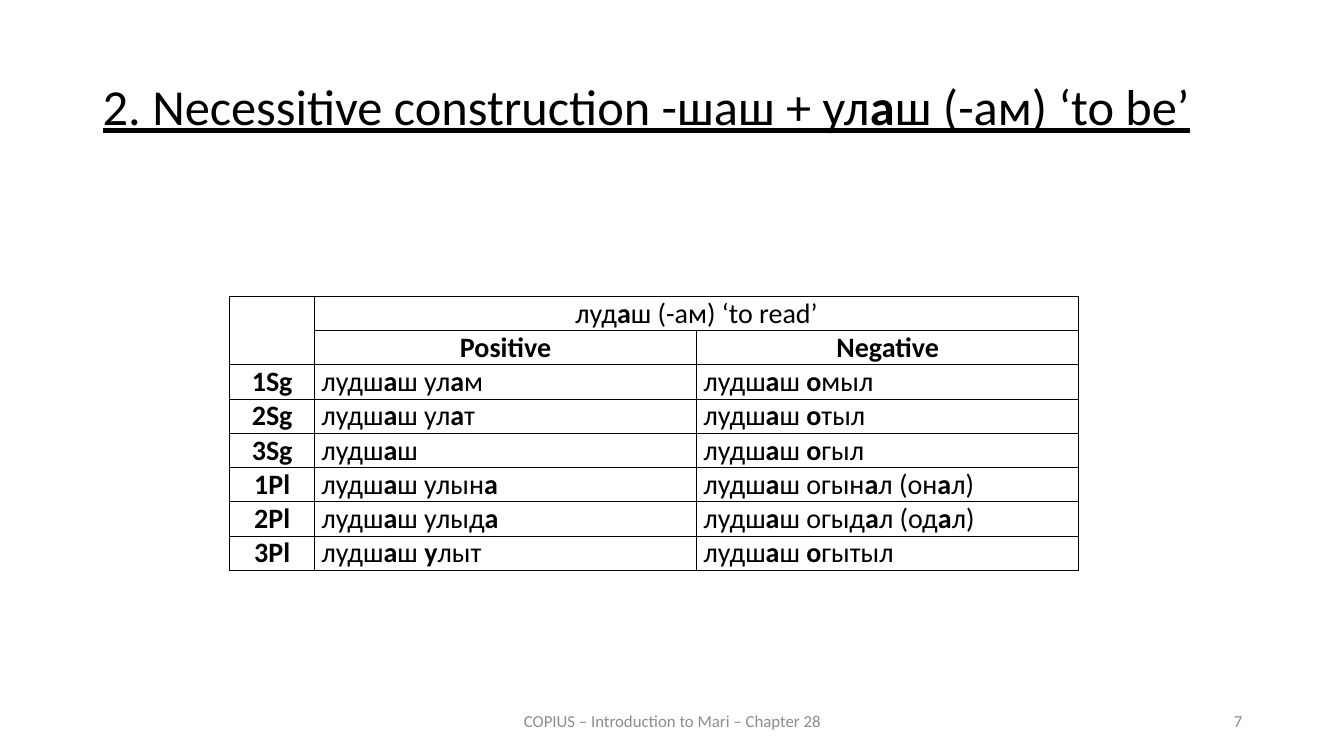
from pptx import Presentation
from pptx.dml.color import RGBColor
from pptx.enum.text import MSO_ANCHOR, PP_ALIGN as Align
from pptx.oxml import parse_xml
from pptx.oxml.ns import nsdecls
from pptx.util import Inches, Pt

BLACK, GREY = "000000", "8C8C8C"
COL_WIDTHS = [0.84, 3.79, 3.79]
ROW_HEIGHT = 0.34
HEADER = [
    ["", "луд*а*ш (-ам) ‘to read’", ""],
    ["", "*Positive*", "*Negative*"],
]
FORMS = [
    ["*1Sg*", "лудш*а*ш ул*а*м", "лудш*а*ш *о*мыл"],
    ["*2Sg*", "лудш*а*ш ул*а*т", "лудш*а*ш *о*тыл"],
    ["*3Sg*", "лудш*а*ш", "лудш*а*ш *о*гыл"],
    ["*1Pl*", "лудш*а*ш улын*а*", "лудш*а*ш огын*а*л (он*а*л)"],
    ["*2Pl*", "лудш*а*ш улыд*а*", "лудш*а*ш огыд*а*л (од*а*л)"],
    ["*3Pl*", "лудш*а*ш *у*лыт", "лудш*а*ш *о*гытыл"],
]


def rgb(color):
    return RGBColor.from_string(color)


def write(tf, text, size=20, color=BLACK, align=Align.LEFT, underline=None, spacing=None):
    """Fill a text frame; parts between asterisks are bold."""
    p = tf.paragraphs[0]
    p.alignment = align
    p.line_spacing = spacing
    for i, part in enumerate(text.split("*")):
        if part:
            r = p.add_run()
            r.text = part
            r.font.name = "Calibri"
            r.font.size = Pt(size)
            r.font.bold = i % 2 == 1
            r.font.underline = underline
            r.font.color.rgb = rgb(color)


def add_text(slide, box, text, anchor=MSO_ANCHOR.MIDDLE, **fmt):
    tf = slide.shapes.add_textbox(*map(Inches, box)).text_frame
    tf.word_wrap = True
    tf.vertical_anchor = anchor
    write(tf, text, **fmt)


def add_borders(cell):
    tc_pr = cell._tc.get_or_add_tcPr()
    for i, side in enumerate(("lnL", "lnR", "lnT", "lnB")):
        tc_pr.insert(i, parse_xml(
            f'<a:{side} {nsdecls("a")} w="{Pt(1)}"><a:solidFill>'
            f'<a:srgbClr val="{BLACK}"/></a:solidFill></a:{side}>'))


def add_paradigm(slide, left, top):
    rows = HEADER + FORMS
    size = sum(COL_WIDTHS), ROW_HEIGHT * len(rows)
    frame = slide.shapes.add_table(len(rows), len(COL_WIDTHS),
                                   *map(Inches, (left, top, *size)))
    table = frame.table
    table.first_row = table.horz_banding = False
    for col, width in zip(table.columns, COL_WIDTHS):
        col.width = Inches(width)
    for i, row in enumerate(rows):
        table.rows[i].height = Inches(ROW_HEIGHT)
        for j, text in enumerate(row):
            cell = table.cell(i, j)
            cell.margin_left = cell.margin_right = Inches(0.07)
            cell.margin_top = cell.margin_bottom = 0
            cell.fill.background()
            add_borders(cell)
            centred = i < len(HEADER) or j == 0
            write(cell.text_frame, text,
                  align=Align.CENTER if centred else Align.JUSTIFY)
    table.cell(0, 0).merge(table.cell(1, 0))
    table.cell(0, 1).merge(table.cell(0, 2))


def main():
    prs = Presentation()
    prs.slide_width, prs.slide_height = Inches(13.33), Inches(7.5)
    slide = prs.slides.add_slide(prs.slide_layouts[6])
    add_text(slide, (0.92, 0.76, 11.5, 0.83),
             "2. Necessitive construction -шаш + ул*а*ш (-ам) ‘to be’",
             anchor=MSO_ANCHOR.TOP, size=36, align=Align.JUSTIFY,
             underline=True, spacing=0.9)
    add_paradigm(slide, 2.28, 2.94)
    add_text(slide, (4.42, 6.95, 4.5, 0.4), "COPIUS – Introduction to Mari – Chapter 28",
             size=12, color=GREY, align=Align.CENTER)
    add_text(slide, (9.42, 6.95, 3, 0.4), "7", size=12, color=GREY, align=Align.RIGHT)
    prs.save("out.pptx")


if __name__ == "__main__":
    main()
